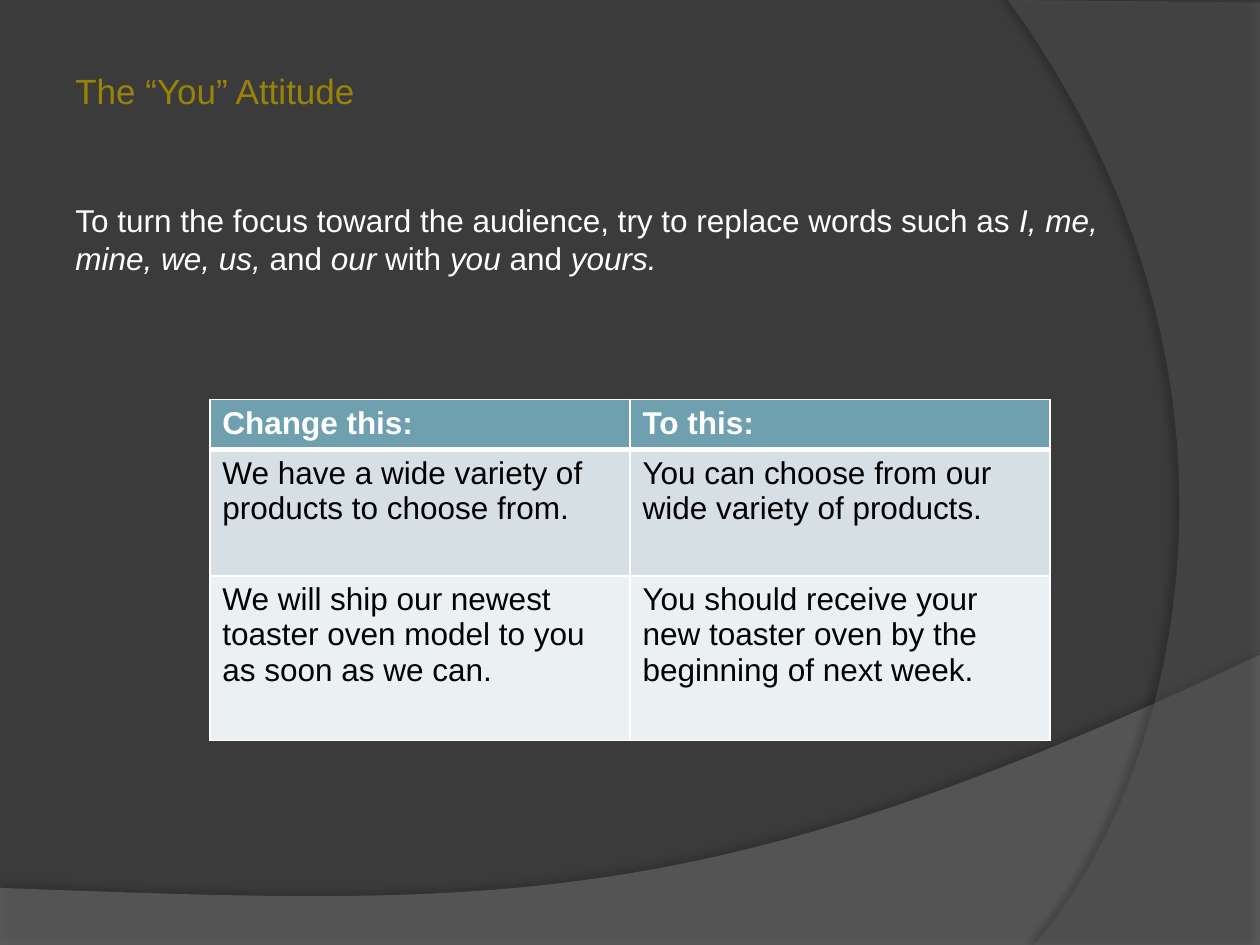
import dataclasses
import typing

import lxml.etree
import pptx
import pptx.dml.color
import pptx.enum.text
import pptx.oxml.ns
import pptx.util

Cm = pptx.util.Cm
Pt = pptx.util.Pt
Point = tuple[float, float]

FONT = "Arial"
WIDTH, HEIGHT = 25.4, 19.05
CURVE_STEPS = 48


@dataclasses.dataclass(frozen=True)
class Swoosh:
    """A curve closed by straight corners; lengths in cm, shadow in points."""
    curve: tuple[Point, Point, Point, Point]
    corners: tuple[Point, ...]
    color: str
    opacity: int
    shadow_opacity: int
    shadow_distance: float
    shadow_angle: int


@dataclasses.dataclass(frozen=True)
class Span:
    text: str
    format: dict[str, typing.Any] = dataclasses.field(default_factory=dict)


@dataclasses.dataclass(frozen=True)
class TableRow:
    texts: tuple[str, str]
    height: float
    fill: str
    color: str
    bold: bool = False


ITALIC = {"italic": True}

SWOOSHES = (
    Swoosh(((25.4, 13.2), (14.2, 18.52), (9.93, 18.26), (0, 17.9)),
           ((0, HEIGHT), (WIDTH, HEIGHT)), "7F7F7F", 45, 35, 3.5, 270),
    Swoosh(((20.85, HEIGHT), (23.75, 15.72), (25.86, 7.62), (20.32, 0)),
           ((WIDTH, 0.05), (WIDTH, HEIGHT)), "5E5E5E", 40, 45, 4, 180),
)

TITLE = (Span("The “You” Attitude"),)
ADVICE = (
    Span("To turn the focus toward the audience, try to replace words such as "),
    Span("I, me, mine, we, us, ", ITALIC),
    Span("and "),
    Span("our ", ITALIC),
    Span("with "),
    Span("you ", ITALIC),
    Span("and "),
    Span("yours.", ITALIC),
)

ROWS = (
    TableRow(("Change this:", "To this:"), 1.0, "6EA0B0", "FFFFFF", True),
    TableRow(("We have a wide variety of products to choose from.",
              "You can choose from our wide variety of products."),
             2.54, "D5DFE4", "000000"),
    TableRow(("We will ship our newest toaster oven model to you as soon as we can.",
              "You should receive your new toaster oven by the beginning of next week."),
             3.32, "EBF0F2", "000000"),
)


def rgb(value: str) -> pptx.dml.color.RGBColor:
    return pptx.dml.color.RGBColor.from_string(value)


def add_node(parent, tag: str, **attributes):
    node = lxml.etree.SubElement(parent, pptx.oxml.ns.qn(tag))
    for name, value in attributes.items():
        node.set(name, str(value))
    return node


def add_color(parent, color: str, opacity: int = 100) -> None:
    node = add_node(parent, "a:srgbClr", val=color)
    if opacity < 100:
        add_node(node, "a:alpha", val=opacity * 1000)


def bezier(curve: tuple[Point, Point, Point, Point]) -> list[Point]:
    """Sample a cubic curve at equal parameter steps."""
    points = []
    for step in range(CURVE_STEPS + 1):
        t = step / CURVE_STEPS
        weights = ((1 - t) ** 3, 3 * t * (1 - t) ** 2, 3 * t * t * (1 - t), t ** 3)
        points.append(tuple(sum(w * p[axis] for w, p in zip(weights, curve))
                            for axis in (0, 1)))
    return points


def draw_swoosh(page, swoosh: Swoosh) -> None:
    outline = [(Cm(x), Cm(y)) for x, y in (*bezier(swoosh.curve), *swoosh.corners)]
    builder = page.shapes.build_freeform(*outline[0])
    builder.add_line_segments(outline[1:], close=True)
    shape = builder.convert_to_shape()
    shape.line.fill.background()
    shape.fill.solid()
    shape.fill.fore_color.rgb = rgb(swoosh.color)
    properties = shape._element.spPr
    fill_color = properties.find(".//" + pptx.oxml.ns.qn("a:srgbClr"))
    add_node(fill_color, "a:alpha", val=swoosh.opacity * 1000)
    shape.shadow.inherit = False
    effects = properties.find(pptx.oxml.ns.qn("a:effectLst"))
    shadow = add_node(effects, "a:outerShdw", blurRad=Pt(4),
                      dist=Pt(swoosh.shadow_distance),
                      dir=swoosh.shadow_angle * 60000, algn="ctr", rotWithShape=0)
    add_color(shadow, "000000", swoosh.shadow_opacity)


def write_spans(para, spans: typing.Iterable[Span], size: float, color: str) -> None:
    for span in spans:
        run = para.add_run()
        run.text = span.text
        values = {"name": FONT, "size": Pt(size), **span.format}
        for name, value in values.items():
            setattr(run.font, name, value)
        run.font.color.rgb = rgb(color)


def draw_text(page, spans: tuple[Span, ...], area: tuple[float, float, float, float],
              size: float, color: str, margin_top: float) -> None:
    box = page.shapes.add_textbox(*map(Cm, area))
    frame_format = {
        "word_wrap": True,
        "margin_top": Cm(margin_top),
        "vertical_anchor": pptx.enum.text.MSO_ANCHOR.TOP,
    }
    for name, value in frame_format.items():
        setattr(box.text_frame, name, value)
    write_spans(box.text_frame.paragraphs[0], spans, size, color)


def draw_borders(cell, widths: dict[str, float]) -> None:
    """Draw white borders; call before filling, as the file format orders them so."""
    properties = cell._tc.get_or_add_tcPr()
    for side, width in widths.items():
        line = add_node(properties, f"a:ln{side}", w=Pt(width))
        add_color(add_node(line, "a:solidFill"), "FFFFFF")


def draw_table(page, rows: tuple[TableRow, ...], left: float, top: float,
               width: float) -> None:
    columns = len(rows[0].texts)
    height = sum(row.height for row in rows)
    table = page.shapes.add_table(len(rows), columns, Cm(left), Cm(top),
                                  Cm(width), Cm(height)).table
    for column in table.columns:
        column.width = Cm(width / columns)
    for index, row in enumerate(rows):
        table.rows[index].height = Cm(row.height)
        borders = {"L": 1, "R": 1, "T": 3 if index == 1 else 1,
                   "B": 3 if index == 0 else 1}
        for cell, text in zip(table.rows[index].cells, row.texts):
            draw_borders(cell, borders)
            cell.fill.solid()
            cell.fill.fore_color.rgb = rgb(row.fill)
            write_spans(cell.text_frame.paragraphs[0],
                        (Span(text, {"bold": row.bold}),), 18, row.color)


def main() -> None:
    deck = pptx.Presentation()
    deck.slide_width, deck.slide_height = Cm(WIDTH), Cm(HEIGHT)
    page = deck.slides.add_slide(deck.slide_layouts[6])
    page.background.fill.solid()
    page.background.fill.fore_color.rgb = rgb("3B3B3B")
    for swoosh in SWOOSHES:
        draw_swoosh(page, swoosh)
    draw_text(page, TITLE, (1.27, 1.27, 10.16, 1.11), 20, "998307", 0.13)
    draw_text(page, ADVICE, (1.27, 3.81, 22.02, 5.64), 18, "FFFFFF", 0.24)
    draw_table(page, ROWS, 4.23, 8.05, 16.94)
    deck.save("out.pptx")


if __name__ == "__main__":
    main()
